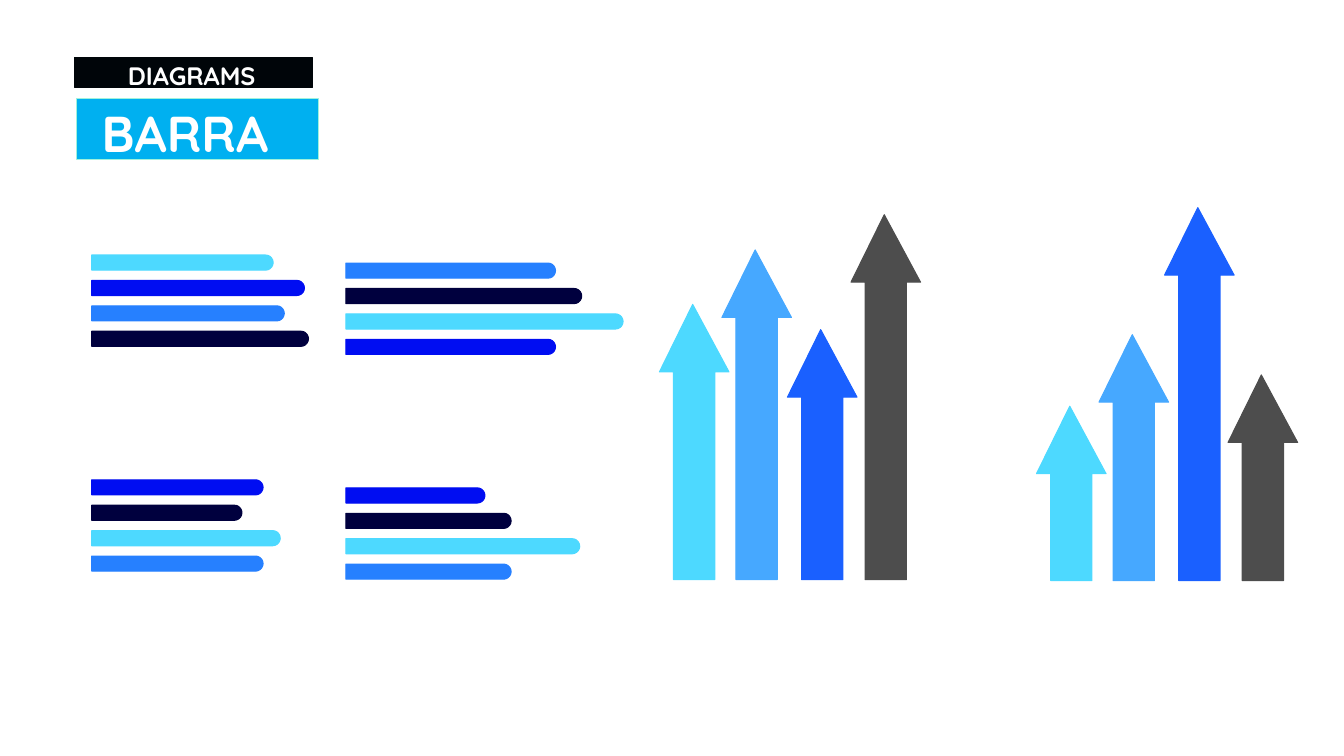
"""Build the bar diagram slide: a title, four sets of bars and two sets of arrows."""
from math import cos, pi, sin

from pptx import Presentation
from pptx.dml.color import RGBColor
from pptx.enum.shapes import MSO_SHAPE
from pptx.enum.text import MSO_AUTO_SIZE
from pptx.util import Pt

PX = 9144
RECTANGLE = MSO_SHAPE.RECTANGLE
GROW = MSO_AUTO_SIZE.SHAPE_TO_FIT_TEXT
FONT = "Quicksand"

WHITE, BLACK, TITLE_BLUE, MINT = "FFFFFF", "000509", "00B0F0", "9FF2DD"
CYAN, BLUE, AZURE, NAVY = "4DD9FF", "000DF2", "2680FF", "00003E"
SKY, ROYAL, GRAY = "46A8FF", "1A60FF", "4D4D4D"

TITLE = ("BARRA", 36, (91, 96, 209, 71))
KICKER = ("DIAGRAMS", 18, (117, 55, 176, 40))
TITLE_BAND = (76, 98, 240, 60)
KICKER_BAND = (74, 57, 236, 30)

BAR_SETS = [
    (343, 261, [(208, AZURE), (234, NAVY), (275, CYAN), (208, BLUE)]),
    (343, 484, [(138, BLUE), (164, NAVY), (232, CYAN), (164, AZURE)]),
    (91, 476, [(170, BLUE), (149, NAVY), (187, CYAN), (170, AZURE)]),
    (91, 253, [(180, CYAN), (211, BLUE), (191, AZURE), (215, NAVY)]),
]
BAR_HEIGHT, BAR_PITCH, END_STEPS = 15, 25.2, 10

ARROW_COLORS = [CYAN, SKY, ROYAL, GRAY]
ARROW_OFFSETS = [0, 62, 127, 190]
ARROW_SETS = [
    (654, 575, [273, 327, 248, 362]),
    (1028, 576, [173, 244, 370, 204]),
]
HEAD_WIDTH, HEAD_HEIGHT, TIP = 69, 67, 33
SHAFT_LEFT, SHAFT_RIGHT = 14, 55


def rgb(color):
    return RGBColor.from_string(color)


def emu(lengths):
    return [round(length * PX) for length in lengths]


def paint(shape, fill, line):
    shape.shadow.inherit = False
    shape.fill.solid()
    shape.fill.fore_color.rgb = rgb(fill)
    shape.line.color.rgb = rgb(line)
    shape.line.width = 0


def add_band(shapes, place, fill, line):
    paint(shapes.add_shape(RECTANGLE, *emu(place)), fill, line)


def add_label(shapes, wording, size, place):
    frame = shapes.add_textbox(*emu(place)).text_frame
    frame.word_wrap = True
    frame.auto_size = GROW
    frame.text = wording
    font = frame.paragraphs[0].runs[0].font
    font.name, font.size, font.bold = FONT, Pt(size), True
    font.color.rgb = rgb(WHITE)


def add_outline(shapes, points, color):
    corners = [emu(point) for point in points]
    builder = shapes.build_freeform(*corners[0])
    builder.add_line_segments(corners[1:], close=True)
    paint(builder.convert_to_shape(), color, color)


def bar_points(left, top, length):
    radius = BAR_HEIGHT / 2
    center_x, center_y = left + length - radius, top + radius
    angles = [pi * step / END_STEPS - pi / 2 for step in range(END_STEPS + 1)]
    end = [(center_x + radius * cos(a), center_y + radius * sin(a)) for a in angles]
    return [(left, top), *end, (left, top + BAR_HEIGHT)]


def arrow_points(left, base, height):
    tip_y = base - height
    neck_y = tip_y + HEAD_HEIGHT
    return [
        (left + TIP, tip_y), (left + HEAD_WIDTH, neck_y),
        (left + SHAFT_RIGHT, neck_y), (left + SHAFT_RIGHT, base),
        (left + SHAFT_LEFT, base), (left + SHAFT_LEFT, neck_y), (left, neck_y),
    ]


def main():
    deck = Presentation()
    deck.slide_width, deck.slide_height = emu((1333, 750))
    shapes = deck.slides.add_slide(deck.slide_layouts[6]).shapes

    add_band(shapes, TITLE_BAND, TITLE_BLUE, MINT)
    kicker = shapes.add_group_shape().shapes
    add_band(kicker, KICKER_BAND, BLACK, BLACK)
    add_label(kicker, *KICKER)
    add_label(shapes, *TITLE)

    for left, top, bars in BAR_SETS:
        for row, (length, color) in enumerate(bars):
            add_outline(shapes, bar_points(left, top + row * BAR_PITCH, length), color)

    for left, base, heights in ARROW_SETS:
        arrows = shapes.add_group_shape().shapes
        for offset, height, color in zip(ARROW_OFFSETS, heights, ARROW_COLORS):
            add_outline(arrows, arrow_points(left + offset, base, height), color)

    deck.save("out.pptx")


if __name__ == "__main__":
    main()
